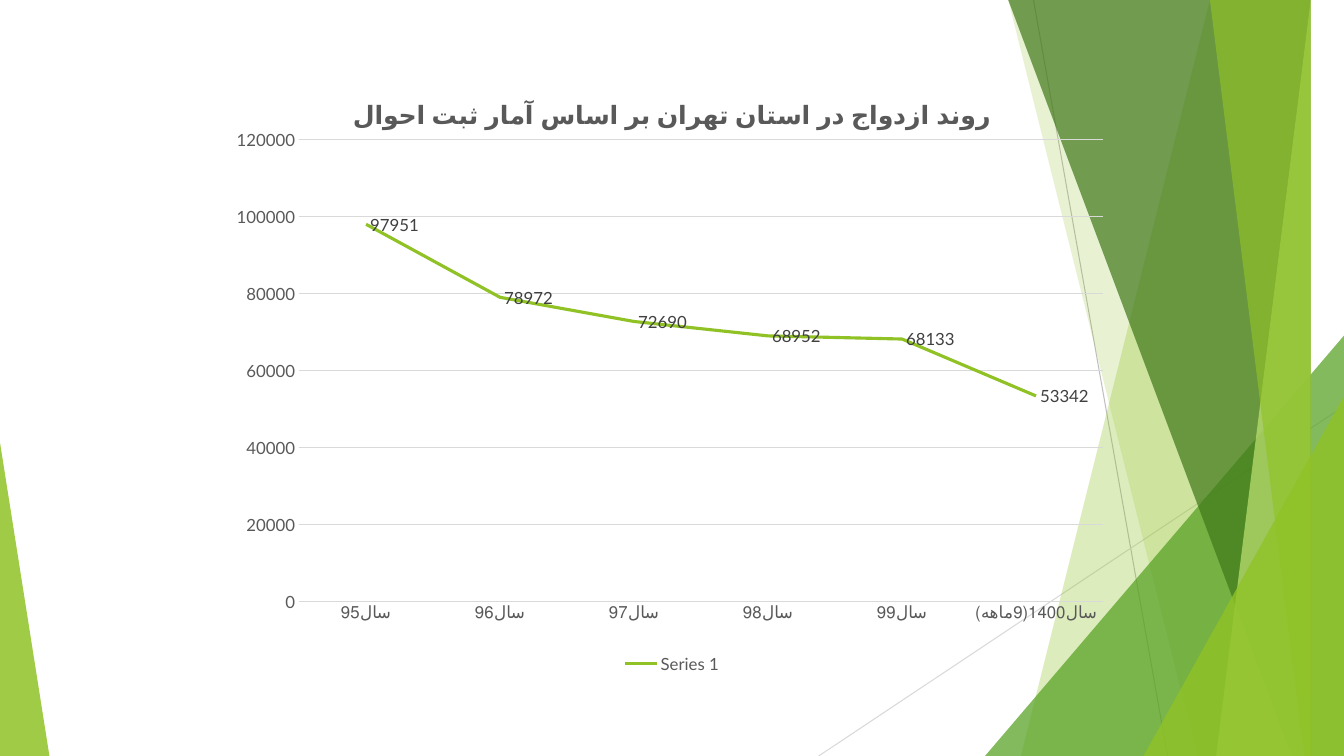
from lxml import etree
from pptx import Presentation
from pptx import util as u
from pptx.chart.data import CategoryChartData
from pptx.dml.color import RGBColor
from pptx.enum import chart as charts, shapes
from pptx.oxml import parse_xml
from pptx.oxml.ns import nsdecls, qn

WIDTH, HEIGHT = 13.33, 7.5
GREEN, GRAY, PALE = "90C226", "595959", "D9D9D9"
FONT = "Lato"


def paint(target, color, opacity=None):
    """Give a fill, or a line's fill, a solid colour and an optional opacity in percent."""
    target.solid()
    target.fore_color.rgb = RGBColor.from_string(color)
    if opacity is not None:
        tint = target._xPr.find(qn("a:solidFill"))[0]
        etree.SubElement(tint, qn("a:alpha")).set("val", str(opacity * 1000))


def set_font(font, size, color, bold=False):
    font.name, font.size, font.bold = FONT, u.Pt(size), bold
    font.color.rgb = RGBColor.from_string(color)


deck = Presentation()
deck.slide_width, deck.slide_height = u.Inches(WIDTH), u.Inches(HEIGHT)
page = deck.slides.add_slide(deck.slide_layouts[6])

# Thin crossing lines behind the ribbons
for x1, y1, x2, color in [(10.25, 0, 11.58, "BFBFBF"), (WIDTH, 4.03, 8.12, PALE)]:
    rule = page.shapes.add_connector(
        shapes.MSO_CONNECTOR.STRAIGHT,
        u.Inches(x1), u.Inches(y1), u.Inches(x2), u.Inches(HEIGHT))
    paint(rule.line.fill, color)
    rule.line.width = u.Pt(0.75)
    etree.SubElement(rule._element.spPr, qn("a:effectLst"))

# Ribbons reach the right edge: left x at the top, left x at the bottom.
# Triangles stand on the bottom edge: left, width, height, apex.
decorations = [
    ("ribbon", (12.28, 10.04), GREEN, 30),
    ("ribbon", (10.5, 11.83), GREEN, 20),
    ("triangle", (9.77, 3.56, 4.17, 1), "54A021", 72),
    ("ribbon", (10.21, 12.91), "3F7819", 70),
    ("ribbon", (13.03, 11.92), "C0E474", 70),
    ("ribbon", (11.96, 13.18), GREEN, 65),
    ("triangle", (11.34, 1.99, 3.57, 1), GREEN, 80),
    ("triangle", (0, 0.49, 3.11, 0), GREEN, 85),
]
for kind, size, color, opacity in decorations:
    if kind == "ribbon":
        top, bottom = size
        outline = page.shapes.build_freeform(top, 0, scale=u.Inches(1))
        outline.add_line_segments([(WIDTH, 0), (WIDTH, HEIGHT), (bottom, HEIGHT)])
        shape = outline.convert_to_shape()
    else:
        left, width, height, apex = size
        shape = page.shapes.add_shape(
            shapes.MSO_SHAPE.ISOSCELES_TRIANGLE,
            u.Inches(left), u.Inches(HEIGHT - height), u.Inches(width), u.Inches(height))
        shape.adjustments[0] = apex
    paint(shape.fill, color, opacity)
    shape.line.fill.background()
    shape.shadow.inherit = False

# Marriages per year
marriages = {
    "سال95": 97951,
    "سال96": 78972,
    "سال97": 72690,
    "سال98": 68952,
    "سال99": 68133,
    "سال1400(9ماهه)": 53342,
}
data = CategoryChartData()
data.categories = list(marriages)
data.add_series("Series 1", list(marriages.values()))
chart = page.shapes.add_chart(
    charts.XL_CHART_TYPE.LINE,
    u.Inches(2.22), u.Inches(0.79), u.Inches(8.89), u.Inches(5.93), data).chart
set_font(chart.font, 12, GRAY)

chart.has_title = True
title = chart.chart_title.text_frame
title.text = "روند ازدواج در استان تهران بر اساس آمار ثبت احوال"
set_font(title.paragraphs[0].font, 18, GRAY, bold=True)

chart.has_legend = True
chart.legend.position = charts.XL_LEGEND_POSITION.BOTTOM
chart.legend.include_in_layout = False
set_font(chart.legend.font, 12, GRAY)

years, counts = chart.category_axis, chart.value_axis
for axis in (years, counts):
    axis.major_tick_mark = axis.minor_tick_mark = charts.XL_TICK_MARK.NONE
    set_font(axis.tick_labels.font, 12, GRAY)
counts.minimum_scale, counts.maximum_scale, counts.major_unit = 0, 120000, 20000
counts.format.line.fill.background()
for line in (years.format.line, counts.major_gridlines.format.line):
    paint(line.fill, PALE)
    line.width = u.Pt(0.75)

plot = chart.plots[0]
plot.vary_by_categories = False
trend = plot.series[0]
trend.smooth = False
trend.marker.style = charts.XL_MARKER_STYLE.NONE
paint(trend.format.line.fill, GREEN)
trend.format.line.width = u.Pt(2.25)
labels = trend.data_labels
labels.show_value = True
labels.position = charts.XL_LABEL_POSITION.RIGHT
set_font(labels.font, 12, "404040")

# Fixed inner plot area, in shares of the chart
area = chart._chartSpace.chart.plotArea
for old in area.findall(qn("c:layout")):
    area.remove(old)
area.insert(0, parse_xml(
    f'<c:layout {nsdecls("c")}><c:manualLayout><c:layoutTarget val="inner"/>'
    '<c:xMode val="edge"/><c:yMode val="edge"/><c:x val="0.084"/><c:y val="0.1"/>'
    '<c:w val="0.897"/><c:h val="0.773"/></c:manualLayout></c:layout>'))

deck.save("out.pptx")
